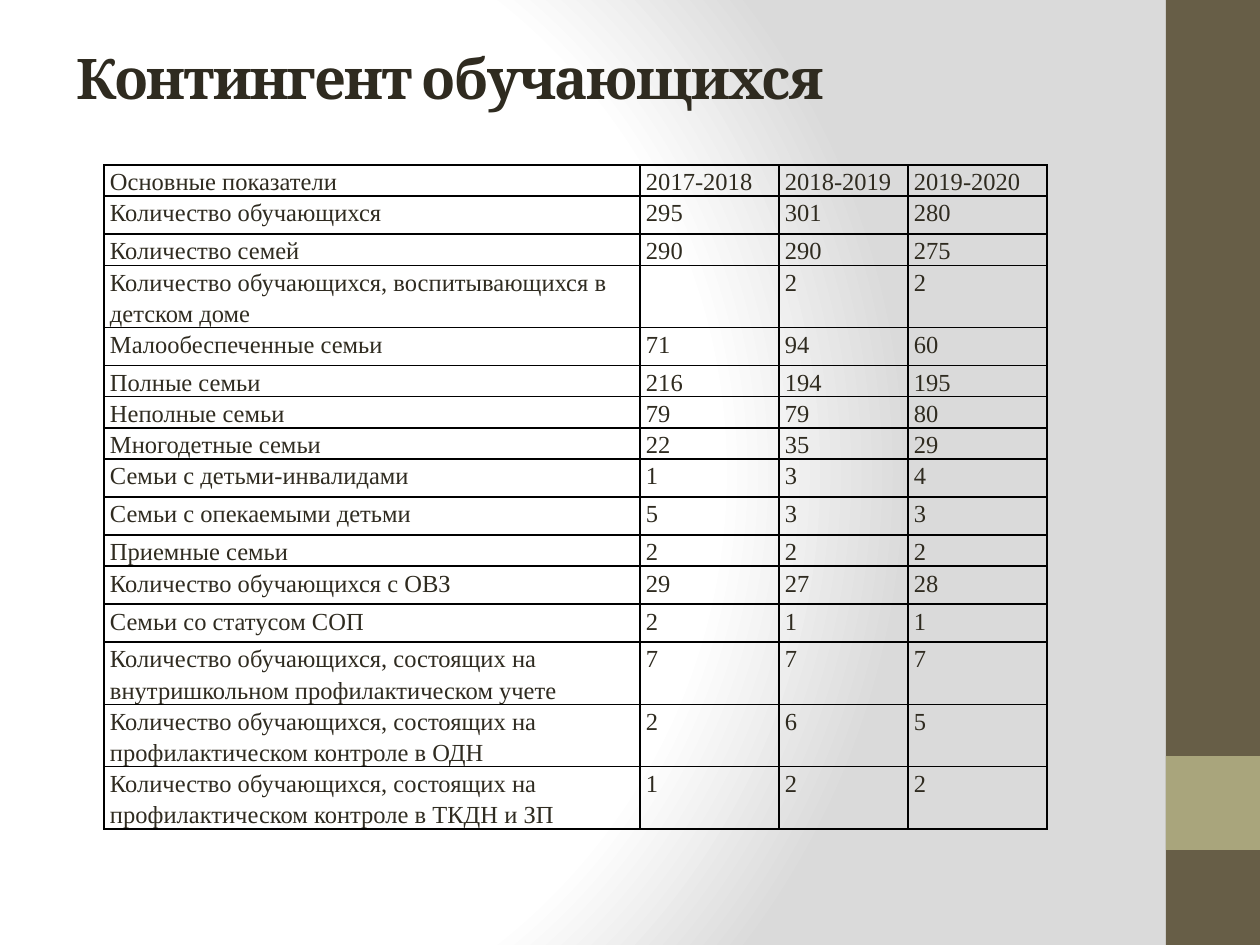
from lxml import etree
from pptx import Presentation
from pptx import util as u
from pptx.dml.color import RGBColor
from pptx.enum import shapes, text
from pptx.oxml import parse_xml
from pptx.oxml.ns import nsdecls, qn

PX = 914400 / 126  # EMU in one px
COLORS = {"ink": "2F2B20", "brown": "675E47", "olive": "A9A57C",
          "line": "000000", "white": "FFFFFF", "grey": "DADADA"}
SHORT, TALL, DOUBLE = 31, 38, 62  # row heights

ROWS = [
    (SHORT, "Основные показатели", "2017-2018", "2018-2019", "2019-2020"),
    (TALL, "Количество обучающихся", "295", "301", "280"),
    (SHORT, "Количество семей", "290", "290", "275"),
    (DOUBLE, "Количество обучающихся, воспитывающихся в детском доме", "", "2", "2"),
    (TALL, "Малообеспеченные семьи", "71", "94", "60"),
    (SHORT, "Полные семьи", "216", "194", "195"),
    (SHORT, "Неполные семьи", "79", "79", "80"),
    (SHORT, "Многодетные семьи", "22", "35", "29"),
    (TALL, "Семьи с детьми-инвалидами", "1", "3", "4"),
    (TALL, "Семьи с опекаемыми детьми", "5", "3", "3"),
    (SHORT, "Приемные семьи", "2", "2", "2"),
    (TALL, "Количество обучающихся с ОВЗ", "29", "27", "28"),
    (TALL, "Семьи со статусом СОП", "2", "1", "1"),
    (DOUBLE, "Количество обучающихся, состоящих на внутришкольном профилактическом учете",
     "7", "7", "7"),
    (DOUBLE, "Количество обучающихся, состоящих на профилактическом контроле в ОДН",
     "2", "6", "5"),
    (DOUBLE, "Количество обучающихся, состоящих на профилактическом контроле в ТКДН и ЗП",
     "1", "2", "2"),
]


def px(n):
    return u.Emu(round(n * PX))


def rgb(name):
    return RGBColor.from_string(COLORS[name])


def write(tf, words, font="Times New Roman", size=14, bold=False,
          color="ink", line_spacing=None, tracking=None):
    p = tf.paragraphs[0]
    p.alignment = text.PP_ALIGN.LEFT
    p.line_spacing = line_spacing
    if not words:
        return
    r = p.add_run()
    r.text = words
    r.font.name, r.font.size, r.font.bold = font, u.Pt(size), bold
    r.font.color.rgb = rgb(color)
    if tracking is not None:
        r.font._element.set("spc", str(tracking * 100))


class SlideBuilder:
    def __init__(self, prs):
        self.s = prs.slides.add_slide(prs.slide_layouts[5])

    def background(self):
        """Radial gradient from white to grey."""
        self.s.background.fill.solid()
        bg = self.s.element.xpath(".//p:bgPr")[0]
        stops = "".join(
            f'<a:gs pos="{pos * 1000}"><a:srgbClr val="{COLORS[c]}"/></a:gs>'
            for pos, c in ((0, "white"), (75, "white"), (100, "grey")))
        bg.replace(bg[0], parse_xml(
            f'<a:gradFill {nsdecls("a")} rotWithShape="1"><a:gsLst>{stops}</a:gsLst>'
            '<a:path path="circle"><a:fillToRect l="20000" t="50000" r="100000" b="50000"/>'
            '</a:path></a:gradFill>'))

    def block(self, x, y, w, h, color):
        sp = self.s.shapes.add_shape(shapes.MSO_SHAPE.RECTANGLE, px(x), px(y), px(w), px(h))
        sp.shadow.inherit = False
        sp.fill.solid()
        sp.fill.fore_color.rgb = rgb(color)
        sp.line.fill.background()

    def title(self, x, y, w, h, words):
        sp = self.s.shapes.title
        sp.left, sp.top, sp.width, sp.height = px(x), px(y), px(w), px(h)
        tf = sp.text_frame
        tf.word_wrap = True
        tf.auto_size = text.MSO_AUTO_SIZE.NONE
        tf.vertical_anchor = text.MSO_ANCHOR.MIDDLE
        write(tf, words, font="Cambria", size=32, bold=True, tracking=-1)

    def borders(self, cell):
        tc_pr = cell._tc.get_or_add_tcPr()
        for i, side in enumerate(("lnL", "lnR", "lnT", "lnB")):
            ln = etree.Element(qn(f"a:{side}"), w=str(u.Pt(1)))
            fill = etree.SubElement(ln, qn("a:solidFill"))
            etree.SubElement(fill, qn("a:srgbClr"), val=COLORS["line"])
            tc_pr.insert(i, ln)

    def table(self, x, y, widths, rows):
        heights = [row[0] for row in rows]
        tbl = self.s.shapes.add_table(len(rows), len(widths), px(x), px(y),
                                      px(sum(widths)), px(sum(heights))).table
        tbl.first_row = tbl.horz_banding = False
        for col, w in zip(tbl.columns, widths):
            col.width = px(w)
        for i, (h, *words) in enumerate(rows):
            tbl.rows[i].height = px(h)
            for j, word in enumerate(words):
                cell = tbl.cell(i, j)
                cell.margin_left = cell.margin_right = px(6)
                cell.margin_top = cell.margin_bottom = 0
                cell.fill.background()
                self.borders(cell)
                write(cell.text_frame, word, line_spacing=1.15)


def main():
    prs = Presentation()
    prs.slide_width, prs.slide_height = px(1260), px(945)
    page = SlideBuilder(prs)
    page.background()
    # Side band
    page.block(1166, 0, 94, 945, "brown")
    page.block(1166, 756, 94, 94, "olive")
    # Heading and figures
    page.title(64, -1, 1050, 157, "Контингент обучающихся")
    page.table(104, 165, (536, 139, 129, 139), ROWS)
    prs.save("out.pptx")


if __name__ == "__main__":
    main()
